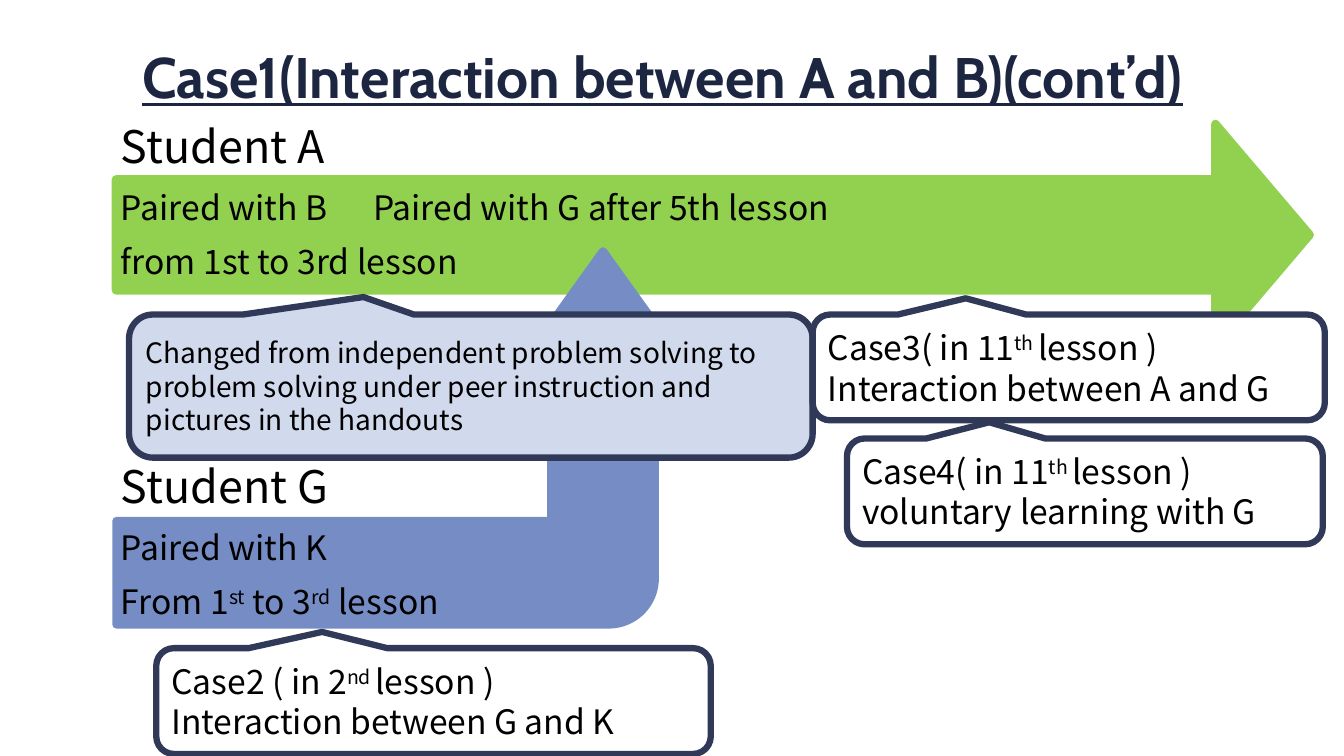
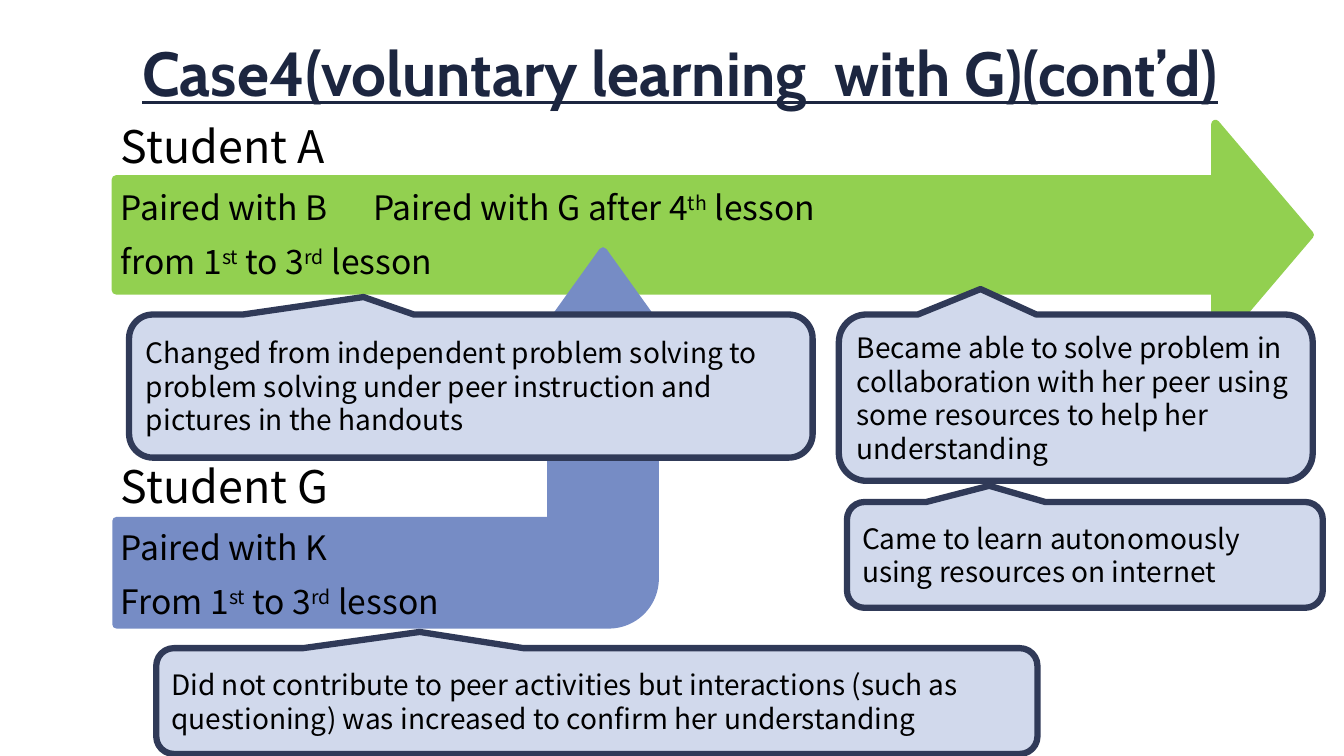
from dataclasses import dataclass

from lxml.etree import SubElement
from pptx import Presentation
from pptx.dml.color import RGBColor
from pptx.enum.shapes import MSO_SHAPE as SHAPE
from pptx.enum.text import MSO_ANCHOR as ANCHOR, MSO_AUTO_SIZE as AUTO, PP_ALIGN as ALIGN
from pptx.oxml.ns import qn
from pptx.util import Inches, Pt


@dataclass(frozen=True)
class Theme:
    green: str = "92D050"
    blue: str = "768CC5"
    pale: str = "D1D9EC"
    white: str = "FFFFFF"
    outline: str = "303A58"
    title: str = "1C2640"
    text: str = "000000"
    title_font: str = "Cabin"
    body_font: str = "Noto Sans CJK JP"
    student: float = 32
    case: float = 24
    finding: float = 20


T = Theme()
TAB = 3.77  # where the second pairing starts
CASE_TAIL = (-0.201, -0.653, 0.167)
CHANGE_TAIL = (-0.157, -0.622, 0.167)


# Text
def add_text(p, text, size, font=T.body_font, color=T.text, bold=False,
             underline=False, spacing=None, before=0):
    """Fill a paragraph; parts between carets are superscript."""
    p.alignment = ALIGN.LEFT
    p.line_spacing = spacing
    p.space_before = Pt(before)
    for i, part in enumerate(text.split("^")):
        r = p.add_run()
        r.text = part
        f = r.font
        f.name, f.size, f.bold, f.underline = font, Pt(size), bold, underline
        f.color.rgb = RGBColor.from_string(color)
        if i % 2:
            r._r.get_or_add_rPr().set("baseline", "30000")


def plain_paragraph(p):
    """Remove bullet and indent, and set the tab stop."""
    pPr = p._p.get_or_add_pPr()
    pPr.set("marL", "0")
    pPr.set("indent", "0")
    SubElement(pPr, qn("a:buNone"))
    tabs = SubElement(pPr, qn("a:tabLst"))
    SubElement(tabs, qn("a:tab"), pos=str(Inches(TAB)), algn="l")


def paragraphs(tf, count):
    return [tf.paragraphs[0]] + [tf.add_paragraph() for _ in range(count - 1)]


def place(sp, left, top, width, height):
    sp.left, sp.top, sp.width, sp.height = map(Inches, (left, top, width, height))


def place_holder(s, sp, box, anchor):
    """Move a placeholder to the front and prepare its text frame."""
    place(sp, *box)
    s.shapes._spTree.append(sp.element)
    tf = sp.text_frame
    tf.word_wrap, tf.auto_size, tf.vertical_anchor = True, AUTO.NONE, anchor
    tf.margin_left = tf.margin_right = Inches(0.13)
    tf.margin_top = tf.margin_bottom = Inches(0.07)
    return tf


# Shapes
def add_shape(s, kind, box, fill, line, weight, adjustments):
    sp = s.shapes.add_shape(kind, *map(Inches, box))
    sp.shadow.inherit = False
    sp.fill.solid()
    sp.fill.fore_color.rgb = RGBColor.from_string(fill)
    sp.line.color.rgb = RGBColor.from_string(line)
    sp.line.width = Pt(weight)
    for i, value in enumerate(adjustments):
        sp.adjustments[i] = value
    return sp


def add_arrow(s, kind, box, color, adjustments, flip=False):
    sp = add_shape(s, kind, box, color, color, 6, adjustments)
    sp.rotation = 270
    if flip:
        sp.element.spPr.find(qn("a:xfrm")).set("flipV", "1")


def add_callout(s, box, lines, size=T.finding, fill=T.pale, tail=CASE_TAIL):
    sp = add_shape(s, SHAPE.ROUNDED_RECTANGULAR_CALLOUT, box, fill, T.outline, 4.5, tail)
    tf = sp.text_frame
    tf.word_wrap, tf.vertical_anchor = True, ANCHOR.MIDDLE
    for p, line in zip(paragraphs(tf, len(lines)), lines):
        add_text(p, line, size, spacing=Pt(1.2 * size))


def add_case(s, box, *lines):
    add_callout(s, box, lines, size=T.case, fill=T.white)


# Slide parts
def add_title(s, text, size, spacing):
    tf = place_holder(s, s.shapes.title, (1.28, 0.13, 11.11, 1.02), ANCHOR.BOTTOM)
    add_text(tf.paragraphs[0], text, size, font=T.title_font, color=T.title,
             bold=True, underline=True, spacing=spacing)


def add_timeline(s, student_a):
    """Arrows and pairings of both students, with the change of student A."""
    add_arrow(s, SHAPE.DOWN_ARROW, (5.97, -3.59, 2.2, 11.84), T.green, (0.5, 0.425))
    add_arrow(s, SHAPE.BENT_ARROW, (2.18, 1.47, 3.7, 5.75), T.blue,
              (0.277, 0.25, 0.348, 0.123), flip=True)
    gap = 18.7
    rows = [("Student A", T.student, 0)]
    rows += [(text, T.case, gap) for text in student_a]
    rows += [("Student G", T.student, 137.5),
             ("Paired with K", T.case, gap),
             ("From 1^st^ to 3^rd^ lesson", T.case, gap)]
    tf = place_holder(s, s.placeholders[1], (1.07, 1.26, 11.98, 5.46), ANCHOR.TOP)
    for p, (text, size, before) in zip(paragraphs(tf, len(rows)), rows):
        plain_paragraph(p)
        add_text(p, text, size, spacing=Pt(0.85 * size), before=before)
    add_callout(s, (1.28, 3.12, 6.78, 1.42),
                ["Changed from independent problem solving to problem solving under "
                 "peer instruction and pictures in the handouts"], tail=CHANGE_TAIL)


def new_slide(prs):
    return prs.slides.add_slide(prs.slide_layouts[1])


def interaction_slide(prs):
    s = new_slide(prs)
    add_timeline(s, ["Paired with B\tPaired with G after 5th lesson",
                     "from 1st to 3rd lesson"])
    add_case(s, (8.06, 3.12, 5.08, 1.05),
             "Case3( in 11^th ^lesson )", "Interaction between A and G")
    add_case(s, (1.55, 6.43, 5.5, 1.05),
             "Case2 ( in 2^nd ^lesson )", "Interaction between G and K")
    add_case(s, (8.4, 4.35, 4.72, 1.05),
             "Case4( in 11^th ^lesson )", "voluntary learning with G")
    add_title(s, "Case1(Interaction between A and B)(cont’d)", 40.8, 0.75)


def voluntary_slide(prs):
    s = new_slide(prs)
    add_timeline(s, ["Paired with B\tPaired with G after 4^th^ lesson",
                     "from 1^st^ to 3^rd^ lesson"])
    add_callout(s, (8.32, 3.12, 4.7, 1.65),
                ["Became able to solve problem in collaboration with her peer using "
                 "some resources to help her understanding"])
    add_callout(s, (1.55, 6.43, 8.74, 1.05),
                ["Did not contribute to peer activities but interactions (such as "
                 "questioning) was increased to confirm her understanding"])
    add_callout(s, (8.4, 4.98, 4.72, 1.05),
                ["Came to learn autonomously using resources on internet"])
    add_title(s, "Case4(voluntary learning  with G)(cont’d)", 44.4, 0.85)


def main():
    prs = Presentation()
    prs.slide_width, prs.slide_height = Inches(13.33), Inches(7.5)
    interaction_slide(prs)
    voluntary_slide(prs)
    prs.save("out.pptx")


if __name__ == "__main__":
    main()
